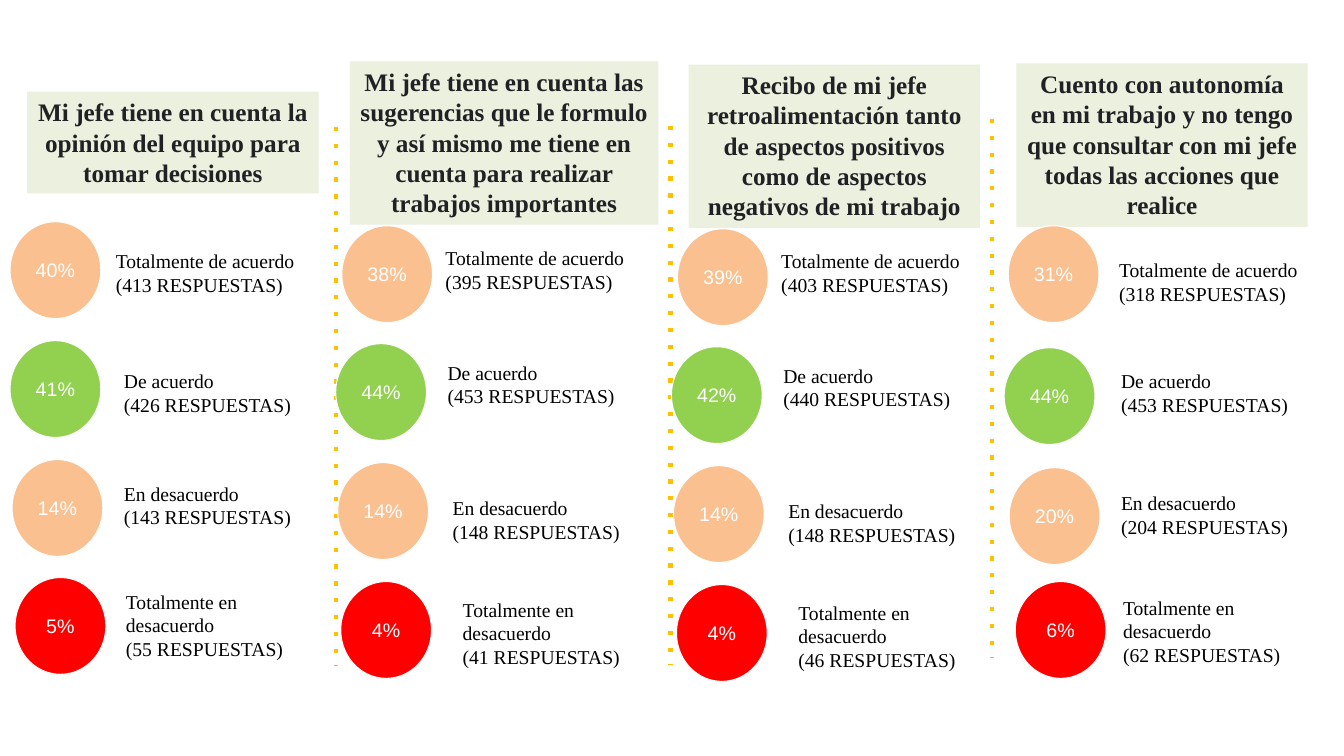
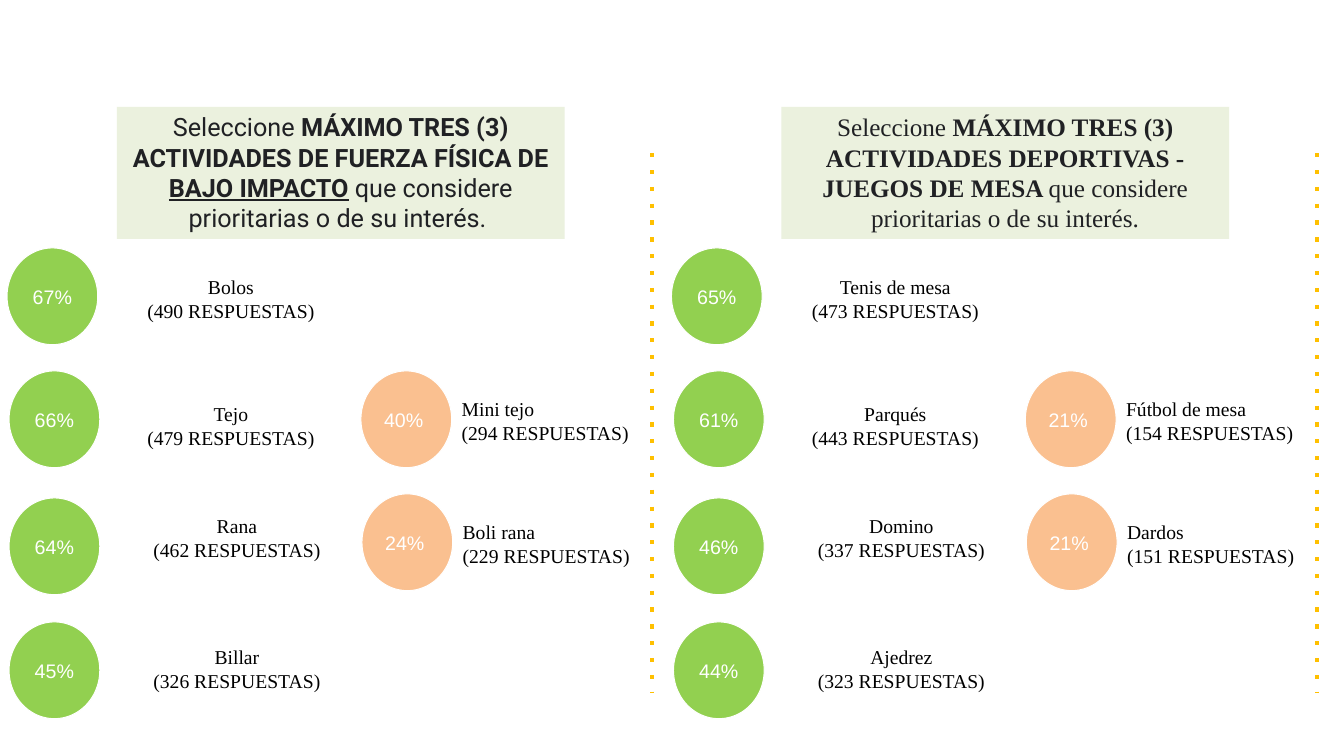
import pptx
import pptx.dml.color
import pptx.enum.shapes
import pptx.enum.text
import pptx.oxml
import pptx.oxml.ns
import pptx.util
from lxml import etree

Inches = pptx.util.Inches
ALIGN = pptx.enum.text.PP_ALIGN
ANCHOR = pptx.enum.text.MSO_ANCHOR
SHAPES = pptx.enum.shapes.MSO_SHAPE

COLORS = {
    "white": "FFFFFF",
    "black": "000000",
    "heading_text": "202124",
    "heading_fill": "EBF1DE",
    "divider": "FFC000",
    "orange": "FAC090",
    "green": "92D050",
    "red": "FF0000",
}
SERIF = "Times New Roman"
CIRCLE_SIZE = (0.9, 0.96)
LABEL_WIDTH = 2.18
DIVIDER_HEIGHT = 5.35

OPINION_ANSWERS = [
    ("Totalmente de acuerdo", "orange", 0.67),
    ("De acuerdo", "green", 0.67),
    ("En desacuerdo", "orange", 0.67),
    ("Totalmente en desacuerdo", "red", 0.91),
]
# Each row: circle left, circle top, label left, label top
FIRST_LAYOUT = [
    (0.1, 2.2, 1.05, 2.37), (0.1, 3.38, 1.13, 3.56),
    (0.12, 4.56, 1.13, 4.68), (0.15, 5.73, 1.15, 5.75),
]
MIDDLE_LAYOUT = [
    (3.39, 2.24, 4.32, 2.34), (3.33, 3.41, 4.34, 3.48),
    (3.35, 4.59, 4.39, 4.82), (3.38, 5.77, 4.49, 5.83),
]
LAST_LAYOUT = [
    (10, 2.24, 11, 2.46), (9.96, 3.45, 11.02, 3.56),
    (10.01, 4.64, 11.02, 4.77), (10.07, 5.77, 11.04, 5.81),
]
OPINION_DIVIDERS = [(3.33, 1.26), (6.65, 1.25), (9.84, 1.18)]
OPINION_COLUMNS = [
    ("Mi jefe tiene en cuenta la opinión del equipo para tomar decisiones",
     (0.27, 0.91, 2.89, 1.01), FIRST_LAYOUT, (0, 0),
     [(40, 413), (41, 426), (14, 143), (5, 55)]),
    ("Mi jefe tiene en cuenta las sugerencias que le formulo y así mismo "
     "me tiene en cuenta para realizar trabajos importantes",
     (3.47, 0.61, 3.06, 1.62), MIDDLE_LAYOUT, (0, 0),
     [(38, 395), (44, 453), (14, 148), (4, 41)]),
    ("Recibo de mi jefe retroalimentación tanto de aspectos positivos como "
     "de aspectos negativos de mi trabajo",
     (6.83, 0.64, 2.89, 1.62), MIDDLE_LAYOUT, (3.33, 0.03),
     [(39, 403), (42, 440), (14, 148), (4, 46)]),
    ("Cuento con autonomía en mi trabajo y no tengo que consultar con mi "
     "jefe todas las acciones que realice",
     (10.08, 0.63, 2.89, 1.62), LAST_LAYOUT, (0, 0),
     [(31, 318), (44, 453), (20, 204), (6, 62)]),
]

PANEL_PITCH = 6.59
MAIN_LAYOUT = [
    (0.07, 2.46, 1.2, 2.63), (0.09, 3.68, 1.2, 3.89),
    (0.09, 4.94, 1.26, 5), (0.09, 6.17, 1.26, 6.3),
]
SIDE_LAYOUT = [(3.58, 3.68, 4.48, 3.84), (3.59, 4.9, 4.49, 5.06)]
ACTIVITY_PANELS = [
    ("Roboto",
     [("Seleccione ", False, False),
      ("MÁXIMO TRES (3) ACTIVIDADES DE FUERZA FÍSICA DE ", True, False),
      ("BAJO IMPACTO", True, True),
      (" ", True, False),
      ("que considere prioritarias o de su interés. ", False, False)],
     [("Bolos", 67, 490), ("Tejo", 66, 479),
      ("Rana", 64, 462), ("Billar", 45, 326)],
     [("Mini tejo", 40, 294), ("Boli rana", 24, 229)]),
    (SERIF,
     [("Seleccione ", False, False),
      ("MÁXIMO TRES (3) ACTIVIDADES DEPORTIVAS - JUEGOS DE MESA ", True, False),
      ("que considere prioritarias o de su interés.", False, False)],
     [("Tenis de mesa", 65, 473), ("Parqués", 61, 443),
      ("Domino", 46, 337), ("Ajedrez", 44, 323)],
     [("Fútbol de mesa", 21, 154), ("Dardos", 21, 151)]),
]


def rgb(color):
    return pptx.dml.color.RGBColor.from_string(COLORS[color])


def format_run(run, font_name, size, color, bold=False, underline=False):
    run.font.name = font_name
    run.font.size = pptx.util.Pt(size)
    run.font.color.rgb = rgb(color)
    run.font.bold = bold
    run.font.underline = underline


def set_frame(text_frame, vertical_margin, anchor, grow):
    text_frame.word_wrap = True
    text_frame.vertical_anchor = anchor
    text_frame.margin_left = text_frame.margin_right = Inches(0.1)
    text_frame.margin_top = text_frame.margin_bottom = Inches(vertical_margin)
    if grow:
        text_frame.auto_size = pptx.enum.text.MSO_AUTO_SIZE.SHAPE_TO_FIT_TEXT


def add_filled_shape(slide, preset, box, fill):
    shape = slide.shapes.add_shape(preset, *map(Inches, box))
    shape.shadow.inherit = False
    shape.fill.solid()
    shape.fill.fore_color.rgb = rgb(fill)
    return shape


def add_heading(slide, box, font_name, pieces):
    shape = add_filled_shape(slide, SHAPES.RECTANGLE, box, "heading_fill")
    shape.line.fill.background()
    set_frame(shape.text_frame, 0.05, ANCHOR.TOP, True)
    paragraph = shape.text_frame.paragraphs[0]
    paragraph.alignment = ALIGN.CENTER
    for text, bold, underline in pieces:
        run = paragraph.add_run()
        run.text = text
        format_run(run, font_name, 18, "heading_text", bold, underline)


def add_circle(slide, left, top, percent, fill, alignment):
    shape = add_filled_shape(slide, SHAPES.OVAL, (left, top, *CIRCLE_SIZE), fill)
    shape.line.color.rgb = rgb("white")
    shape.line.width = pptx.util.Pt(0.75)
    set_frame(shape.text_frame, 0.1, ANCHOR.MIDDLE, False)
    paragraph = shape.text_frame.paragraphs[0]
    paragraph.text = f"{percent}%"
    paragraph.alignment = alignment
    format_run(paragraph.runs[0], "Arial", 14, "white")


def add_label(slide, left, top, height, answer, count, alignment):
    box = slide.shapes.add_textbox(*map(Inches, (left, top, LABEL_WIDTH, height)))
    set_frame(box.text_frame, 0.1, ANCHOR.TOP, True)
    box.text_frame.text = f"{answer}\n({count} RESPUESTAS)"
    for paragraph in box.text_frame.paragraphs:
        paragraph.alignment = alignment
        format_run(paragraph.runs[0], SERIF, 14, "black")


def add_result(slide, place, offset, answer, percent, count, fill,
               height=0.67, circle_alignment=ALIGN.CENTER, label_alignment=ALIGN.LEFT):
    circle_left, circle_top, label_left, label_top = place
    across, down = offset
    add_circle(slide, circle_left + across, circle_top + down,
               percent, fill, circle_alignment)
    add_label(slide, label_left + across, label_top + down,
              height, answer, count, label_alignment)


def add_divider(slide, left, top):
    connector = slide.shapes.add_connector(
        pptx.enum.shapes.MSO_CONNECTOR.STRAIGHT,
        *map(Inches, (left, top, left, top + DIVIDER_HEIGHT)))
    connector.line.color.rgb = rgb("divider")
    connector.line.width = pptx.util.Pt(3)
    properties = connector.line._get_or_add_ln()
    dash = etree.SubElement(properties, pptx.oxml.ns.qn("a:prstDash"))
    dash.set("val", "dot")
    etree.SubElement(connector._element.spPr, pptx.oxml.ns.qn("a:effectLst"))


def build_opinions(slide):
    for left, top in OPINION_DIVIDERS:
        add_divider(slide, left, top)
    for question, box, layout, offset, results in OPINION_COLUMNS:
        add_heading(slide, box, SERIF, [(question, True, False)])
        for (answer, fill, height), place, (percent, count) in zip(
                OPINION_ANSWERS, layout, results):
            add_result(slide, place, offset, answer, percent, count, fill, height)


def build_activities(slide):
    for index, (font_name, pieces, main_results, side_results) in enumerate(ACTIVITY_PANELS):
        across = index * PANEL_PITCH
        add_divider(slide, 6.47 + across, 1.52)
        add_heading(slide, (1.16 + across, 1.06, 4.44, 1.31), font_name, pieces)
        for place, result in zip(MAIN_LAYOUT, main_results):
            add_result(slide, place, (across, 0), *result, "green",
                       label_alignment=ALIGN.CENTER)
        for place, result in zip(SIDE_LAYOUT, side_results):
            add_result(slide, place, (across, 0), *result, "orange",
                       circle_alignment=ALIGN.JUSTIFY)


def main():
    presentation = pptx.Presentation()
    presentation.slide_width = Inches(13.33)
    presentation.slide_height = Inches(7.5)
    for build in (build_opinions, build_activities):
        build(presentation.slides.add_slide(presentation.slide_layouts[6]))
    presentation.save("out.pptx")


if __name__ == "__main__":
    main()
